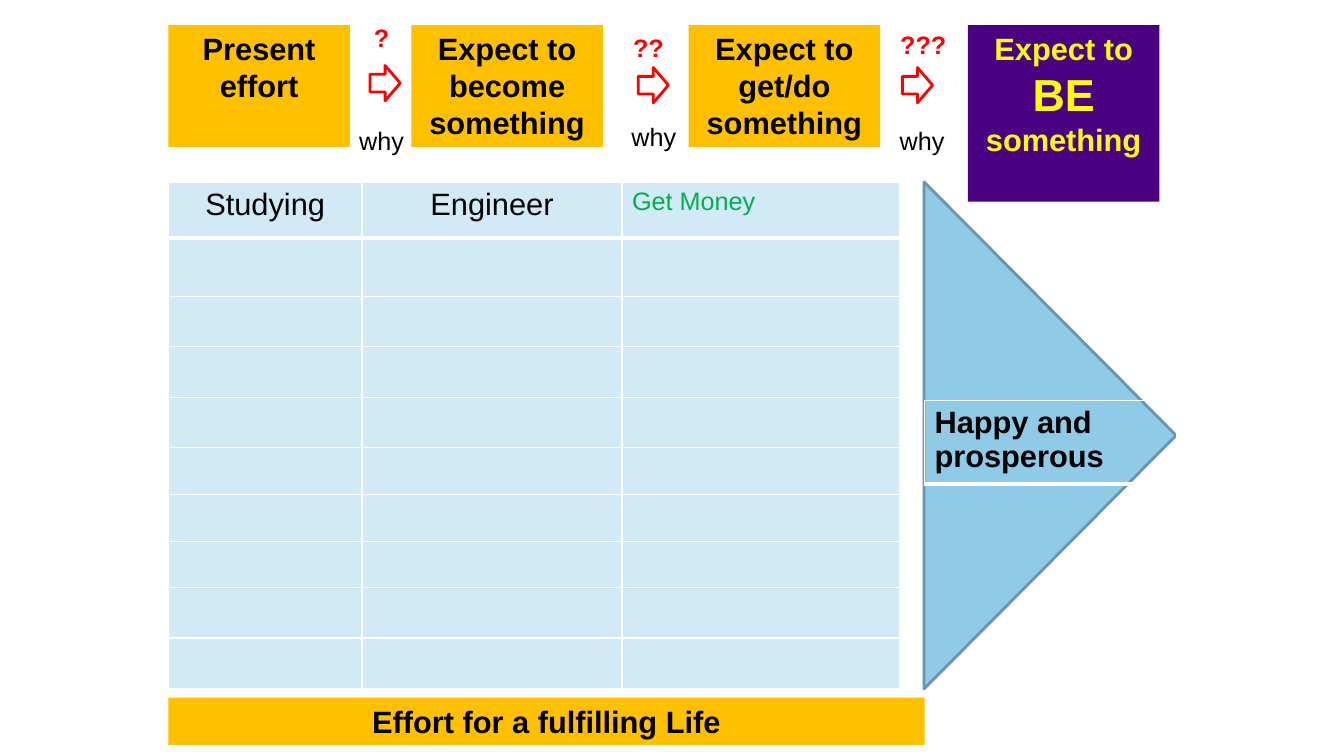
"""Build a slide that leads from present effort to being happy and prosperous."""
from dataclasses import dataclass

from lxml import etree
from pptx import Presentation
from pptx.dml.color import RGBColor
from pptx.enum.shapes import MSO_SHAPE
from pptx.enum.text import MSO_ANCHOR, MSO_AUTO_SIZE, PP_ALIGN
from pptx.oxml.ns import qn
from pptx.util import Inches, Pt


@dataclass(frozen=True)
class Theme:
    font: str = "Arial"
    black: str = "000000"
    white: str = "FFFFFF"
    amber: str = "FFC000"
    indigo: str = "4B0082"
    yellow: str = "FFFF00"
    red: str = "FF0000"
    green: str = "00B050"
    sky: str = "8FCAE7"
    sky_edge: str = "6A95AB"
    pale: str = "D2EAF5"
    small: int = 18
    body: int = 22
    large: int = 32


T = Theme()


def write(tf, runs, color=T.black, bold=False, align=PP_ALIGN.CENTER):
    """Fill the first paragraph with (text, size) runs."""
    p = tf.paragraphs[0]
    p.alignment = align
    p.font.name = T.font
    p.font.bold = bold
    p.font.color.rgb = RGBColor.from_string(color)
    for text, size in runs:
        r = p.add_run()
        r.text = text
        if len(runs) == 1:
            p.font.size = Pt(size)
        else:
            r.font.size = Pt(size)


def add_borders(cell, bottom):
    """Draw white cell borders, with a bottom line of the given width."""
    tcPr = cell._tc.get_or_add_tcPr()
    for side, width in (("L", 1), ("R", 1), ("T", 1), ("B", bottom)):
        ln = etree.SubElement(tcPr, qn(f"a:ln{side}"), w=str(Pt(width)))
        fill = etree.SubElement(ln, qn("a:solidFill"))
        etree.SubElement(fill, qn("a:srgbClr"), val=T.white)


prs = Presentation()
prs.slide_width = Inches(13.33)
prs.slide_height = Inches(7.5)
s = prs.slides.add_slide(prs.slide_layouts[6])

triangle = s.shapes.add_shape(MSO_SHAPE.ISOSCELES_TRIANGLE, Inches(7.9), Inches(3.07),
                              Inches(5.03), Inches(2.5))
triangle.rotation = 90
triangle.shadow.inherit = False
triangle.fill.solid()
triangle.fill.fore_color.rgb = RGBColor.from_string(T.sky)
triangle.line.color.rgb = RGBColor.from_string(T.sky_edge)
triangle.line.width = Pt(2)

boxes = [
    (1.67, 0.25, 1.8, 1.21, T.amber, T.black, [("Present effort", T.body)]),
    (4.08, 0.25, 1.9, 1.21, T.amber, T.black, [("Expect to become something", T.body)]),
    (6.83, 0.25, 1.9, 1.21, T.amber, T.black, [("Expect to get/do something", T.body)]),
    (9.6, 0.25, 1.9, 1.75, T.indigo, T.yellow,
     [("Expect to ", T.body), ("BE ", T.large), ("something", T.body)]),
    (1.67, 6.92, 7.5, 0.47, T.amber, T.black, [("Effort for a fulfilling Life", T.body)]),
]
for x, y, w, h, fill, color, runs in boxes:
    sp = s.shapes.add_shape(MSO_SHAPE.RECTANGLE, Inches(x), Inches(y), Inches(w), Inches(h))
    sp.shadow.inherit = False
    sp.fill.solid()
    sp.fill.fore_color.rgb = RGBColor.from_string(fill)
    sp.line.fill.background()
    sp.text_frame.word_wrap = True
    sp.text_frame.vertical_anchor = MSO_ANCHOR.TOP
    write(sp.text_frame, runs, color, bold=True)

steps = [
    ((3.67, 0.65), "?", (3.61, 0.17, 0.36), (3.45, 1.19)),
    ((6.33, 0.67), "??", (6.18, 0.27, 0.51), (6.15, 1.15)),
    ((8.95, 0.67), "???", (8.83, 0.24, 0.66), (8.81, 1.19)),
]
for (arrow_x, arrow_y), marks, mark_place, why_place in steps:
    arrow = s.shapes.add_shape(MSO_SHAPE.RIGHT_ARROW, Inches(arrow_x), Inches(arrow_y),
                               Inches(0.3), Inches(0.35))
    arrow.shadow.inherit = False
    arrow.fill.background()
    arrow.line.color.rgb = RGBColor.from_string(T.red)
    arrow.line.width = Pt(2)
    labels = [
        (marks, mark_place, T.red, True, PP_ALIGN.LEFT, False),
        ("why", (*why_place, 0.67), T.black, False, PP_ALIGN.CENTER, True),
    ]
    for text, (x, y, w), color, bold, align, wrap in labels:
        tf = s.shapes.add_textbox(Inches(x), Inches(y), Inches(w), Inches(0.4)).text_frame
        tf.word_wrap = wrap
        tf.auto_size = MSO_AUTO_SIZE.SHAPE_TO_FIT_TEXT
        write(tf, [(text, T.small)], color, bold, align)

goal = s.shapes.add_table(1, 1, Inches(9.17), Inches(3.97), Inches(2.5), Inches(0.83)).table
cell = goal.cell(0, 0)
add_borders(cell, 3)
cell.fill.background()
write(cell.text_frame, [("Happy and prosperous", T.body)], bold=True, align=PP_ALIGN.LEFT)

widths = [1.92, 2.58, 2.75]
heights = [0.55, 0.58, 0.5, 0.5, 0.5, 0.47, 0.46, 0.46, 0.5, 0.5]
headings = [
    ("Studying", T.body, T.black, PP_ALIGN.CENTER),
    ("Engineer", T.body, T.black, PP_ALIGN.CENTER),
    ("Get Money", T.small, T.green, PP_ALIGN.LEFT),
]
efforts = s.shapes.add_table(len(heights), len(widths), Inches(1.67), Inches(1.81),
                             Inches(sum(widths)), Inches(sum(heights))).table
for col, width in zip(efforts.columns, widths):
    col.width = Inches(width)
for i, (row, height) in enumerate(zip(efforts.rows, heights)):
    row.height = Inches(height)
    for cell in row.cells:
        add_borders(cell, 3 if i == 0 else 1)
        cell.fill.solid()
        cell.fill.fore_color.rgb = RGBColor.from_string(T.pale)
for cell, (text, size, color, align) in zip(efforts.rows[0].cells, headings):
    write(cell.text_frame, [(text, size)], color, align=align)

prs.save("out.pptx")
